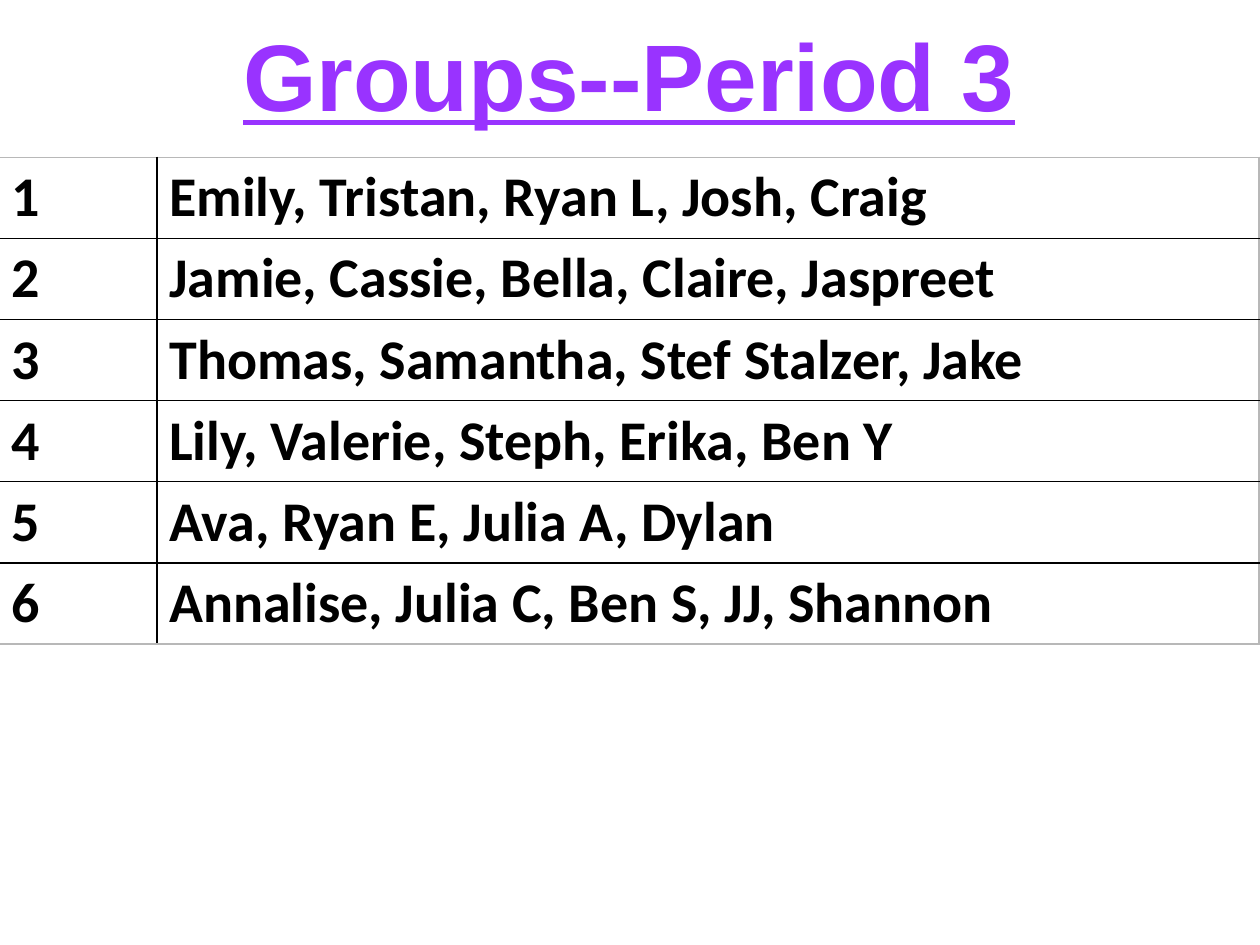
from lxml.etree import SubElement
from pptx import Presentation
from pptx.dml.color import RGBColor as RGB
from pptx.enum.text import MSO_ANCHOR as Anchor, PP_ALIGN as Align
from pptx.oxml.ns import qn
from pptx.util import Cm, Pt

COLORS = {"title": "9933FF", "text": "000000", "grid": "000000", "frame": "B8B8B8"}

GROUPS = [
    "Emily, Tristan, Ryan L, Josh, Craig",
    "Jamie, Cassie, Bella, Claire, Jaspreet",
    "Thomas, Samantha, Stef Stalzer, Jake",
    "Lily, Valerie, Steph, Erika, Ben Y",
    "Ava, Ryan E, Julia A, Dylan",
    "Annalise, Julia C, Ben S, JJ, Shannon",
]


class SlideBuilder:
    """Holds the style and the slide being built."""

    def __init__(self, slide, colors):
        self.s = slide
        self.colors = colors

    def add_run(self, p, text, font, size, color, underline=False):
        r = p.add_run()
        r.text = text
        r.font.name = font
        r.font.size = Pt(size)
        r.font.bold = True
        r.font.underline = underline
        r.font.color.rgb = RGB.from_string(self.colors[color])

    def title(self, text, left, top, width, height):
        sp = self.s.shapes.add_textbox(Cm(left), Cm(top), Cm(width), Cm(height))
        tf = sp.text_frame
        tf.word_wrap = True
        tf.vertical_anchor = Anchor.MIDDLE
        p = tf.paragraphs[0]
        p.alignment = Align.CENTER
        p.line_spacing = 0.9
        self.add_run(p, text, "Arial", 54, "title", underline=True)

    def borders(self, cell, sides):
        """Draw 1 pt borders; sides maps L, R, T, B to a colour name."""
        tc_pr = cell._tc.get_or_add_tcPr()
        for i, (side, color) in enumerate(sides.items()):
            ln = tc_pr.makeelement(qn(f"a:ln{side}"), {"w": str(Pt(1))})
            fill = SubElement(ln, qn("a:solidFill"))
            SubElement(fill, qn("a:srgbClr"), val=self.colors[color])
            tc_pr.insert(i, ln)

    def table(self, rows, left, top, col_widths, row_height):
        n_rows, n_cols = len(rows), len(col_widths)
        frame = self.s.shapes.add_table(
            n_rows, n_cols, Cm(left), Cm(top),
            Cm(sum(col_widths)), Cm(row_height * n_rows))
        table = frame.table
        table.first_row = table.horz_banding = False
        for col, width in zip(table.columns, col_widths):
            col.width = Cm(width)
        for i, row in enumerate(rows):
            table.rows[i].height = Cm(row_height)
            for j, text in enumerate(row):
                cell = table.cell(i, j)
                cell.fill.background()
                self.add_run(cell.text_frame.paragraphs[0], text,
                             "Calibri", 32, "text")
                # Outer edges take the frame colour, inner ones the grid colour
                outer = {"L": j == 0, "R": j == n_cols - 1,
                         "T": i == 0, "B": i == n_rows - 1}
                self.borders(cell, {side: "frame" if edge else "grid"
                                    for side, edge in outer.items()})


def main():
    prs = Presentation()
    prs.slide_width, prs.slide_height = Cm(25.4), Cm(19.05)
    builder = SlideBuilder(prs.slides.add_slide(prs.slide_layouts[6]), COLORS)

    # Numbered groups
    rows = [(str(n), names) for n, names in enumerate(GROUPS, 1)]
    builder.table(rows, -0.02, 3.17, (3.18, 22.22), 1.63)

    # Heading
    builder.title("Groups--Period 3", -0.02, -0.2, 25.4, 3.68)

    prs.save("out.pptx")


if __name__ == "__main__":
    main()
